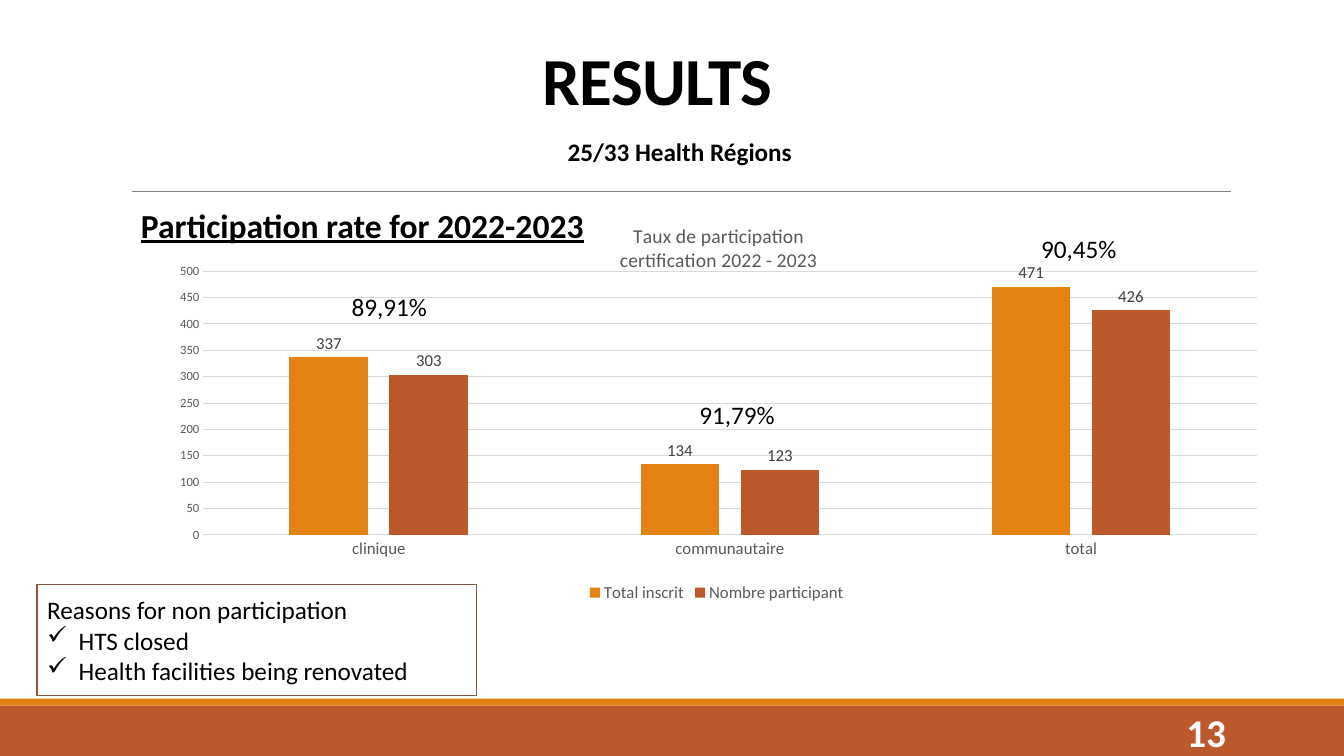
import pptx
import pptx.chart.data
import pptx.dml.color
import pptx.enum.chart
import pptx.enum.shapes
import pptx.enum.text
import pptx.oxml
import pptx.oxml.ns
import pptx.util

Pt = pptx.util.Pt
RGB = pptx.dml.color.RGBColor.from_string
ALIGN = pptx.enum.text.PP_ALIGN
ANCHOR = pptx.enum.text.MSO_ANCHOR
SHAPE = pptx.enum.shapes.MSO_SHAPE
XL = pptx.enum.chart
qn = pptx.oxml.ns.qn
FONT = "Calibri"
COLORS = {
    "black": "000000", "white": "FFFFFF", "orange": "E48312", "rust": "BD582C",
    "rule": "808080", "border": "865640", "grid": "D9D9D9", "axis": "595959",
    "label": "404040",
}


def add_text(text, box, size=18, color="black", bold=False, underline=False,
             align=ALIGN.LEFT, anchor=ANCHOR.MIDDLE, wrap=True, spacing=None,
             tracking=None, bullet=None, fill=None, line=None):
    if fill or line:
        sp = s.shapes.add_shape(SHAPE.RECTANGLE, *map(Pt, box))
        sp.shadow.inherit = False
        if fill:
            sp.fill.solid()
            sp.fill.fore_color.rgb = RGB(COLORS[fill])
        else:
            sp.fill.background()
        if line:
            sp.line.color.rgb = RGB(COLORS[line])
            sp.line.width = Pt(1.25)
        else:
            sp.line.fill.background()
    else:
        sp = s.shapes.add_textbox(*map(Pt, box))
    tf = sp.text_frame
    tf.word_wrap = wrap
    tf.vertical_anchor = anchor
    for i, content in enumerate(text.split("\n") if text else []):
        p = tf.add_paragraph() if i else tf.paragraphs[0]
        p.alignment = align
        if spacing:
            p.line_spacing = spacing
        if bullet and i:
            pPr = p._p.get_or_add_pPr()
            pPr.set("marL", str(Pt(22.5)))
            pPr.set("indent", str(-Pt(22.5)))
            bu = pptx.oxml.parse_xml(
                f'<a:buChar {pptx.oxml.ns.nsdecls("a")} char="{bullet}"/>')
            pPr.append(bu)
        r = p.add_run()
        r.text = content
        r.font.name = FONT
        r.font.size = Pt(size)
        r.font.bold = bold
        r.font.underline = underline
        r.font.color.rgb = RGB(COLORS[color])
        if tracking:
            r._r.get_or_add_rPr().set("spc", str(tracking))


def set_font(font, size, color):
    font.name = FONT
    font.size = Pt(size)
    font.bold = False
    font.color.rgb = RGB(COLORS[color])


prs = pptx.Presentation()
prs.slide_width, prs.slide_height = Pt(960), Pt(540)
s = prs.slides.add_slide(prs.slide_layouts[6])

add_text("", (0, 504, 960, 36), fill="rust")
add_text("", (0, 499, 960, 5), fill="orange")
rule = s.shapes.add_connector(
    pptx.enum.shapes.MSO_CONNECTOR.STRAIGHT, Pt(94.3), Pt(136.8), Pt(879), Pt(136.8))
rule.line.color.rgb = RGB(COLORS["rule"])
rule.line.width = Pt(0.5)
rule._element.spPr.append(
    pptx.oxml.parse_xml(f'<a:effectLst {pptx.oxml.ns.nsdecls("a")}/>'))

add_text("RESULTS ", (80.6, 22.3, 788.4, 66.2), size=48, bold=True, align=ALIGN.CENTER,
         anchor=ANCHOR.BOTTOM, spacing=0.85, tracking=-50)
add_text("13", (779.8, 508.3, 103, 28.8), size=28, color="white", bold=True,
         align=ALIGN.RIGHT)
add_text("25/33 Health Régions", (371.5, 88.6, 228.2, 38.9), bold=True,
         align=ALIGN.CENTER, fill="white")
add_text("Participation rate for 2022-2023", (93.6, 141.8, 355, 37.4), size=24,
         bold=True, underline=True)

data = pptx.chart.data.CategoryChartData()
data.categories = ["clinique", "communautaire", "total"]
data.add_series("Total inscrit", (337, 134, 471))
data.add_series("Nombre participant", (303, 123, 426))
chart = s.shapes.add_chart(XL.XL_CHART_TYPE.COLUMN_CLUSTERED, Pt(115.9), Pt(145.4),
                           Pt(792), Pt(288), data).chart
set_font(chart.font, 10, "black")

chart.has_title = True
tf = chart.chart_title.text_frame
tf.text = "Taux de participation\ncertification 2022 - 2023"
for p in tf.paragraphs:
    set_font(p.runs[0].font, 14, "axis")

chart.has_legend = True
chart.legend.position = XL.XL_LEGEND_POSITION.BOTTOM
chart.legend.include_in_layout = False
set_font(chart.legend.font, 12, "axis")

cat, val = chart.category_axis, chart.value_axis
for axis, size in ((cat, 12), (val, 9)):
    axis.major_tick_mark = axis.minor_tick_mark = XL.XL_TICK_MARK.NONE
    set_font(axis.tick_labels.font, size, "axis")
val.minimum_scale, val.maximum_scale, val.major_unit = 0, 500, 50
val.format.line.fill.background()
val.has_major_gridlines = True
for line in (cat.format.line, val.major_gridlines.format.line):
    line.color.rgb = RGB(COLORS["grid"])
    line.width = Pt(0.75)

plot = chart.plots[0]
plot.gap_width, plot.overlap = 219, -27
plot.vary_by_categories = False
for series, color in zip(plot.series, ("orange", "rust")):
    series.format.fill.solid()
    series.format.fill.fore_color.rgb = RGB(COLORS[color])
    labels = series.data_labels
    labels.show_value = True
    labels.position = XL.XL_LABEL_POSITION.OUTSIDE_END
    set_font(labels.font, 12, "label")

space = chart._chartSpace
inner = '<c:layoutTarget val="inner"/>'
layouts = (
    (space.find(".//" + qn("c:title")), 1, "", {"x": 0.41, "y": 0.04}),
    (space.find(".//" + qn("c:plotArea")), 0, inner,
     {"x": 0.037, "y": 0.168, "w": 0.95, "h": 0.654}),
)
for parent, index, target, values in layouts:
    for old in parent.findall(qn("c:layout")):
        parent.remove(old)
    modes = "".join(f'<c:{k}Mode val="edge"/>' for k in "xy")
    sizes = "".join(f'<c:{k} val="{v}"/>' for k, v in values.items())
    parent.insert(index, pptx.oxml.parse_xml(
        f'<c:layout {pptx.oxml.ns.nsdecls("c")}><c:manualLayout>'
        f'{target}{modes}{sizes}</c:manualLayout></c:layout>'))
space.find(qn("c:chart")).addnext(pptx.oxml.parse_xml(
    f'<c:spPr {pptx.oxml.ns.nsdecls("c", "a")}><a:noFill/>'
    '<a:ln><a:noFill/></a:ln></c:spPr>'))

for rate, x, y in (("89,91%", 244, 204.5), ("91,79%", 492.5, 281.5),
                   ("90,45%", 736.6, 163.4)):
    add_text(rate, (x, y, 73.4, 28.8), anchor=ANCHOR.TOP, wrap=False)

add_text("Reasons for non participation\nHTS closed\nHealth facilities being renovated",
         (26.6, 417.6, 313.9, 79.2), bullet="✓", line="border")

prs.save("out.pptx")
